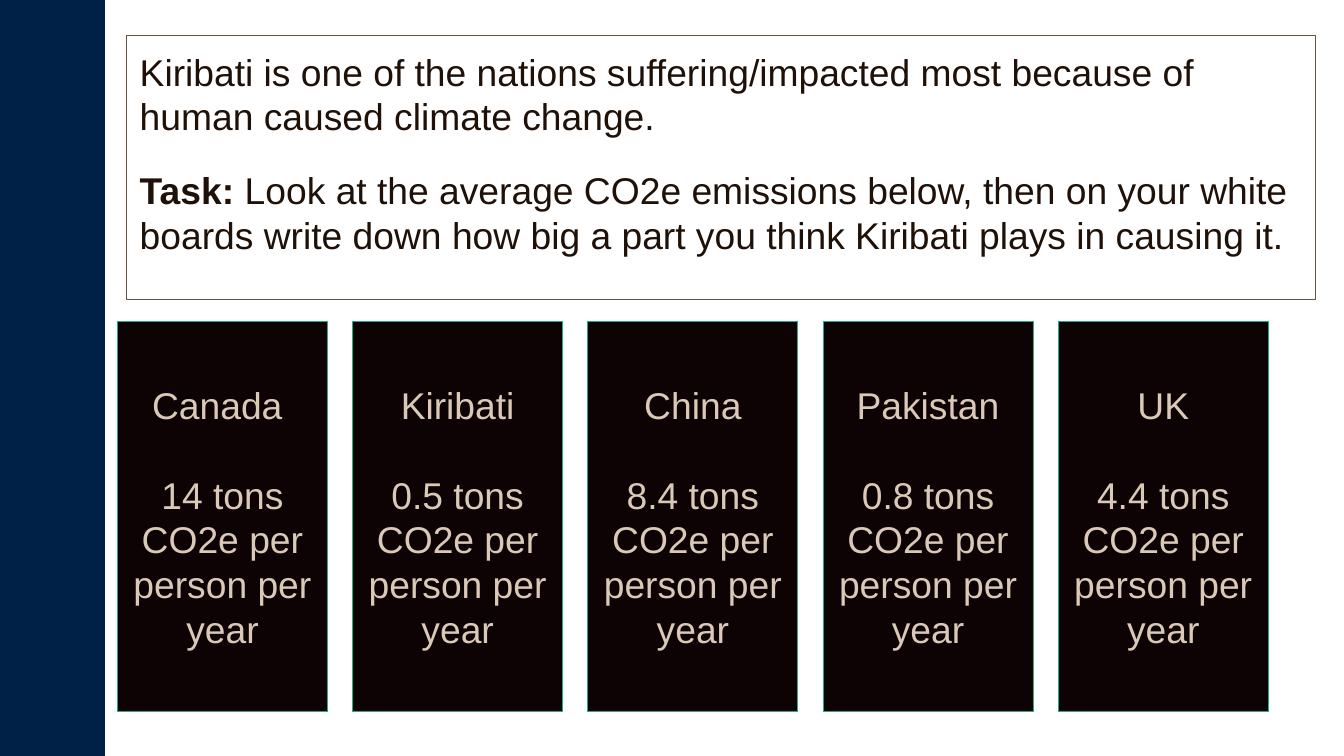
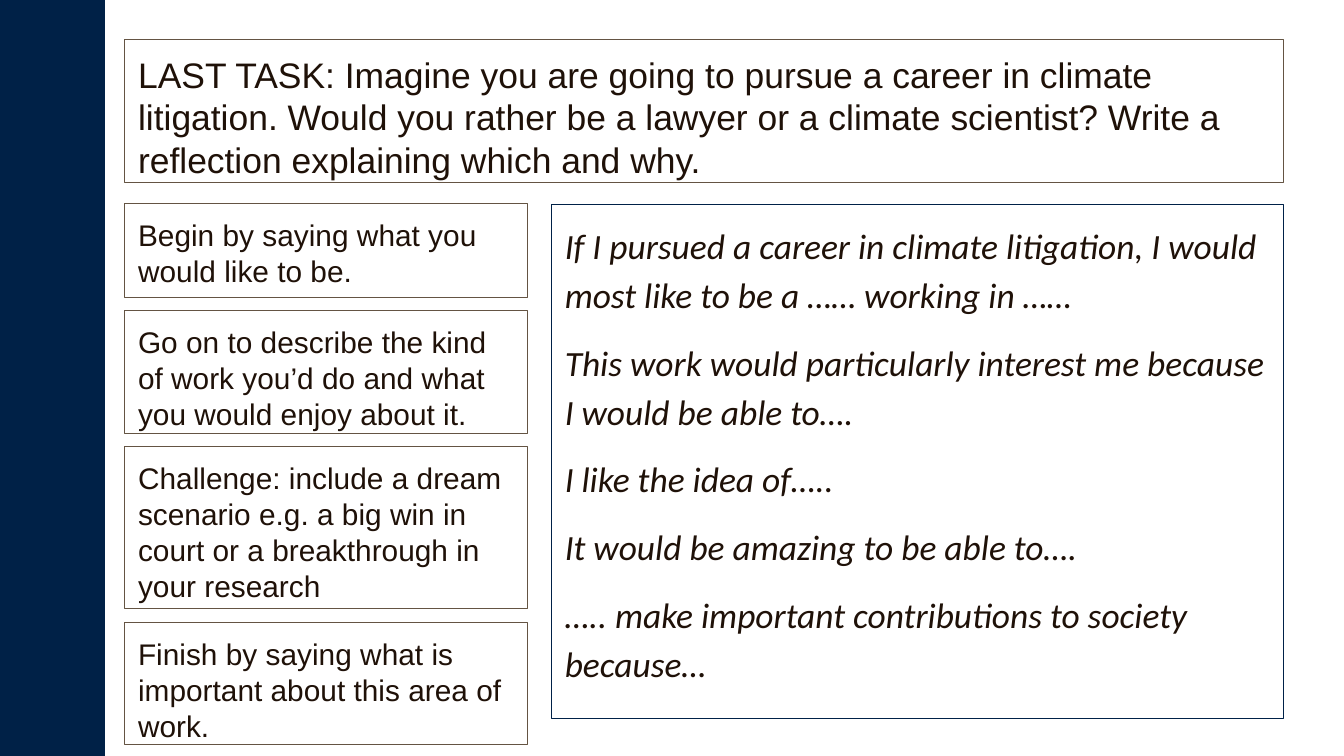
import pptx
import pptx.dml.color
import pptx.enum.shapes
import pptx.enum.text
import pptx.util
from dataclasses import dataclass

Pt = pptx.util.Pt
ALIGN = pptx.enum.text.PP_ALIGN
ANCHOR = pptx.enum.text.MSO_ANCHOR
RECT = pptx.enum.shapes.MSO_SHAPE.RECTANGLE

COLORS = {
    "navy": "002147",
    "brown": "645443",
    "ink": "1F1108",
    "black": "0E0304",
    "green": "1DAD89",
    "sand": "DAC9B7",
}
INSET = Pt(9.6)


@dataclass(frozen=True)
class Style:
    size: float
    color: str = "ink"
    line: str = "brown"
    fill: str | None = None
    font: str = "Arial"
    italic: bool = False
    align: ALIGN = ALIGN.LEFT
    anchor: ANCHOR = ANCHOR.TOP
    spacing: float = 1.0
    gap: float = 0  # space before every paragraph but the first


@dataclass(frozen=True)
class Box:
    left: float
    top: float
    width: float
    height: float


@dataclass(frozen=True)
class Country:
    name: str
    tons: str


@dataclass(frozen=True)
class Step:
    text: str
    height: float


QUESTION = Style(26.67, gap=20.5)
CARD = Style(26.67, "sand", "green", "black", align=ALIGN.CENTER,
             anchor=ANCHOR.MIDDLE, gap=32)
LAST_TASK = Style(25.33)
STEP = Style(21.33)
STARTERS = Style(25.33, line="navy", font="Calibri", italic=True,
                 spacing=1.15, gap=13.4)

COUNTRIES = [
    Country("Canada ", "14"),
    Country("Kiribati", "0.5"),
    Country("China", "8.4"),
    Country("Pakistan", "0.8"),
    Country("UK", "4.4"),
]
STEPS = [
    Step("Begin by saying what you would like to be.", 67),
    Step("Go on to describe the kind of work you’d do and what you would "
         "enjoy about it.", 87.8),
    Step("Challenge: include a dream scenario e.g. a big win in court or a "
         "breakthrough in your research", 115.9),
    Step("Finish by saying what is important about this area of work.", 87.8),
]
SENTENCE_STARTERS = [
    "If I pursued a career in climate litigation, I would most like to be a "
    "…… working in ……",
    "This work would particularly interest me because I would be able to….",
    "I like the idea of…..",
    "It would be amazing to be able to….",
    "….. make important contributions to society because…",
]


def rgb(name: str) -> pptx.dml.color.RGBColor:
    return pptx.dml.color.RGBColor.from_string(COLORS[name])


def apply(target, values: dict) -> None:
    for name, value in values.items():
        setattr(target, name, value)


def format_box(sp, box: Box, style: Style, paragraphs: list[str]) -> None:
    """Place and fill a box; text before a | is bold."""
    apply(sp, {"left": Pt(box.left), "top": Pt(box.top),
               "width": Pt(box.width), "height": Pt(box.height)})
    if style.fill:
        sp.fill.solid()
        sp.fill.fore_color.rgb = rgb(style.fill)
    else:
        sp.fill.background()
    sp.line.color.rgb = rgb(style.line)
    sp.line.width = Pt(0.75)

    tf = sp.text_frame
    apply(tf, {"word_wrap": True, "vertical_anchor": style.anchor,
               "auto_size": pptx.enum.text.MSO_AUTO_SIZE.NONE,
               "margin_left": INSET, "margin_right": INSET,
               "margin_top": INSET, "margin_bottom": INSET})
    for i, text in enumerate(paragraphs):
        p = tf.add_paragraph() if i else tf.paragraphs[0]
        apply(p, {"alignment": style.align, "line_spacing": style.spacing,
                  "space_before": Pt(style.gap if i else 0)})
        bold, _, plain = text.rpartition("|")
        for part, is_bold in ((bold, True), (plain, False)):
            if part:
                r = p.add_run()
                r.text = part
                apply(r.font, {"name": style.font, "size": Pt(style.size),
                               "italic": style.italic, "bold": is_bold})
                r.font.color.rgb = rgb(style.color)


def add_box(slide, box: Box, style: Style, paragraphs: list[str]) -> None:
    sp = slide.shapes.add_shape(RECT, 0, 0, Pt(1), Pt(1))
    sp.shadow.inherit = False
    format_box(sp, box, style, paragraphs)


def add_band(slide, height: int) -> None:
    sp = slide.shapes.add_shape(RECT, 0, 0, Pt(75), height)
    sp.shadow.inherit = False
    sp.fill.solid()
    sp.fill.fore_color.rgb = rgb("navy")
    sp.line.fill.background()


def add_slide(prs, box: Box, style: Style, title: list[str]):
    """Start a slide with the side band and a framed title."""
    slide = prs.slides.add_slide(prs.slide_layouts[5])
    add_band(slide, prs.slide_height)
    format_box(slide.shapes.title, box, style, title)
    return slide


def build_emissions(prs) -> None:
    slide = add_slide(prs, Box(90.2, 25.2, 849.4, 189), QUESTION, [
        "Kiribati is one of the nations suffering/impacted most because of "
        "human caused climate change.",
        "Task: |Look at the average CO2e emissions below, then on your white "
        "boards write down how big a part you think Kiribati plays in "
        "causing it.",
    ])
    # Country cards
    for i, country in enumerate(COUNTRIES):
        add_box(slide, Box(84 + 168 * i, 229.7, 150, 278.6), CARD,
                [country.name, f"{country.tons} tons CO2e per person per year"])


def build_reflection(prs) -> None:
    left, right = 89, 916.6
    slide = add_slide(prs, Box(left, 28, right - left, 102.2), LAST_TASK, [
        "LAST TASK: Imagine you are going to pursue a career in climate "
        "litigation. Would you rather be a lawyer or a climate scientist? "
        "Write a reflection explaining which and why.",
    ])
    # Sentence starters
    add_box(slide, Box(393.8, 146, right - 393.8, 367), STARTERS,
            SENTENCE_STARTERS)
    # Stacked writing steps
    top = 145.4
    for step in STEPS:
        add_box(slide, Box(left, top, 288, step.height), STEP, [step.text])
        top += step.height + 9.4


def main() -> None:
    prs = pptx.Presentation()
    prs.slide_width, prs.slide_height = Pt(960), Pt(540)
    build_emissions(prs)
    build_reflection(prs)
    prs.save("out.pptx")


if __name__ == "__main__":
    main()
